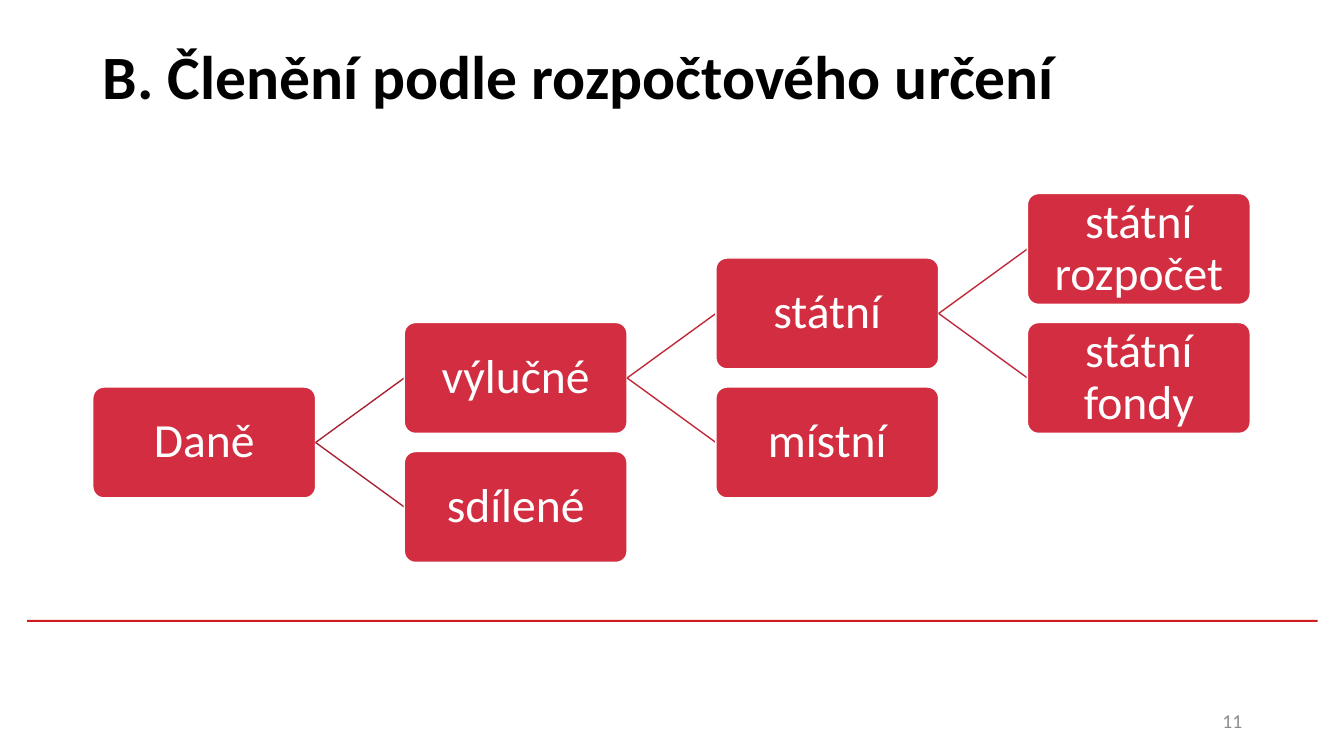
from dataclasses import dataclass

from lxml.etree import SubElement
from pptx import Presentation
from pptx.dml.color import RGBColor as RGB
from pptx.enum.shapes import MSO_CONNECTOR as Conn, MSO_SHAPE as Shape
from pptx.enum.text import MSO_ANCHOR as Anchor, MSO_AUTO_SIZE as Fit, PP_ALIGN as Align
from pptx.oxml.ns import qn
from pptx.util import Inches, Pt


@dataclass(frozen=True)
class Theme:
    font: str = "Calibri"
    black: str = "000000"
    white: str = "FFFFFF"
    grey: str = "8C8C8C"
    rule: str = "CD1F21"
    node: str = "D22D40"
    root: str = "A82433"
    link: str = "BF293A"
    title: int = 44
    body: int = 34
    small: int = 14


THEME = Theme()
WIDE, HIGH = 2.21, 1.1
STEP = 3.09   # from one column to the next
HALF = 0.64   # from a parent's centre to a child's

TREE = ("Daně", [
    ("výlučné", [
        ("státní", [("státní rozpočet", []), ("státní fondy", [])]),
        ("místní", []),
    ]),
    ("sdílené", []),
])


def write(shape, text, size, color, align=Align.LEFT, bold=False, inset=None, lines=None):
    frame = shape.text_frame
    frame.word_wrap = True
    frame.auto_size = Fit.NONE
    frame.vertical_anchor = Anchor.MIDDLE
    if inset is not None:
        frame.margin_left = frame.margin_right = Inches(inset)
        frame.margin_top = frame.margin_bottom = Inches(inset)
    para = frame.paragraphs[0]
    para.alignment = align
    para.line_spacing = lines
    run = para.add_run()
    run.text = text
    font = run.font
    font.name, font.size, font.bold = THEME.font, Pt(size), bold
    font.color.rgb = RGB.from_string(color)


def place(shape, x, y, w, h):
    shape.left, shape.top = Inches(x), Inches(y)
    shape.width, shape.height = Inches(w), Inches(h)


def block(slide, kind, x, y, w, h, fill):
    shape = slide.shapes.add_shape(kind, Inches(x), Inches(y), Inches(w), Inches(h))
    shape.shadow.inherit = False
    shape.fill.solid()
    shape.fill.fore_color.rgb = RGB.from_string(fill)
    shape.line.fill.background()
    return shape


def join(slide, x1, y1, x2, y2, color):
    line = slide.shapes.add_connector(
        Conn.STRAIGHT, Inches(x1), Inches(y1), Inches(x2), Inches(y2))
    line.line.color.rgb = RGB.from_string(color)
    line.line.width = Pt(1)
    SubElement(line._element.spPr, qn("a:effectLst"))


def branch(slide, tree, x, mid, depth=0):
    """Draw a node centred on height mid, then its children to the right."""
    name, kids = tree
    node = block(slide, Shape.ROUNDED_RECTANGLE, x, mid - HIGH / 2, WIDE, HIGH, THEME.node)
    node.adjustments[0] = 0.1
    node.line.color.rgb = RGB.from_string(THEME.white)
    node.line.width = Pt(1)
    write(node, name, THEME.body, THEME.white, align=Align.CENTER, inset=0.05, lines=0.9)
    for sign, kid in zip((-1, 1), kids):
        y = mid + sign * HALF
        color = THEME.link if depth else THEME.root
        join(slide, x + WIDE, mid, x + STEP, y, color)
        branch(slide, kid, x + STEP, y, depth + 1)


def head(slide, x, y, w, h):
    title = slide.shapes.title
    place(title, x, y, w, h)
    write(title, "B. Členění podle rozpočtového určení", THEME.title, THEME.black, bold=True)


def foot(slide, x, y, w, h):
    page = slide.shapes.add_textbox(Inches(x), Inches(y), Inches(w), Inches(h))
    write(page, "11", THEME.small, THEME.grey, align=Align.RIGHT)


def main():
    deck = Presentation()
    deck.slide_width, deck.slide_height = Inches(13.33), Inches(7.5)
    slide = deck.slides.add_slide(deck.slide_layouts[5])
    block(slide, Shape.RECTANGLE, 0.27, 6.15, 12.8, 0.02, THEME.rule)
    head(slide, 0.92, 0.02, 11.5, 1.45)
    branch(slide, TREE, 0.92, 4.39)
    foot(slide, 9.42, 6.95, 3, 0.4)
    deck.save("out.pptx")


if __name__ == "__main__":
    main()
